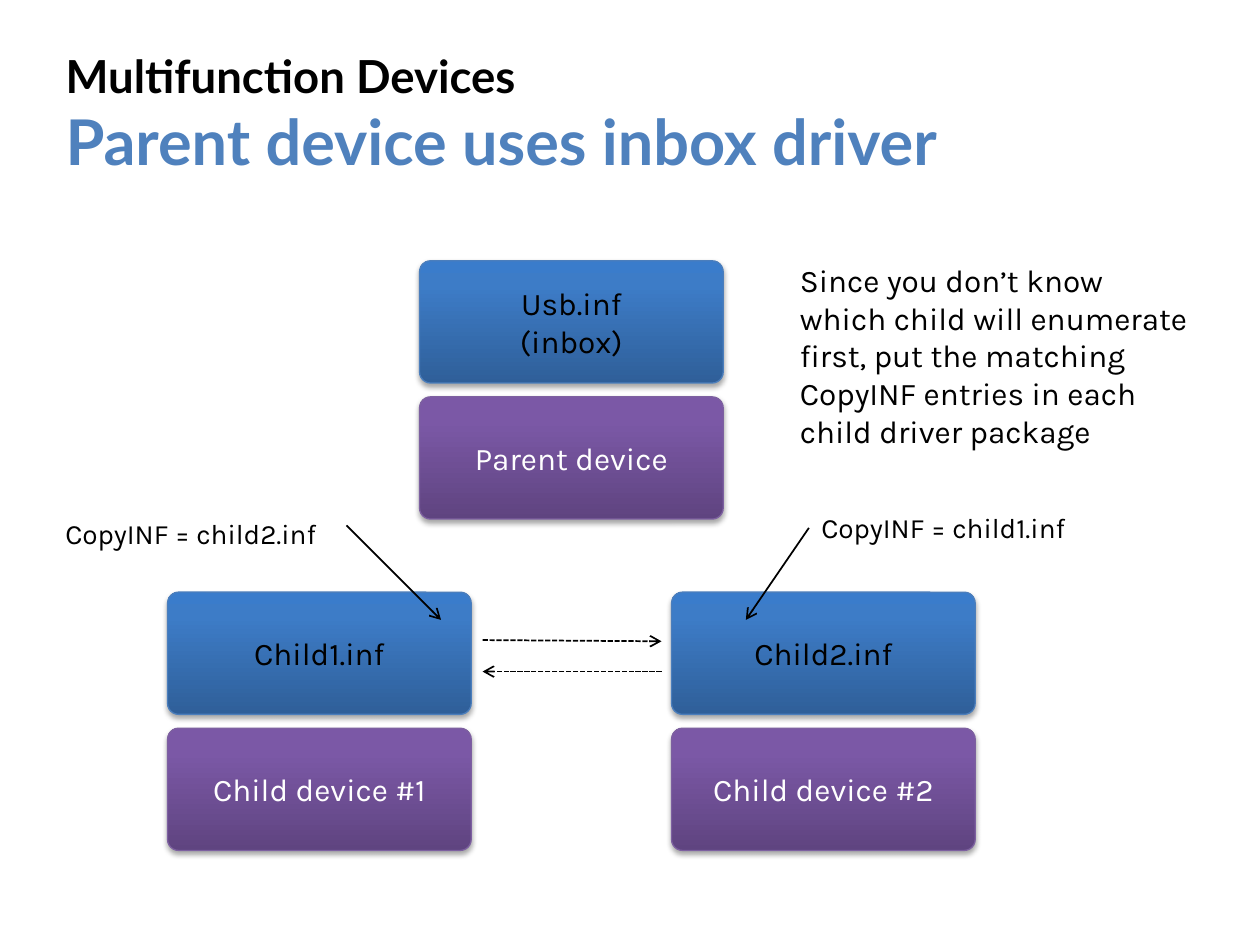
import copy

import pptx
import pptx.dml.color
import pptx.enum.dml
import pptx.enum.shapes
import pptx.enum.text
import pptx.oxml
import pptx.oxml.ns
import pptx.util

Inches = pptx.util.Inches
Pt = pptx.util.Pt
RGBColor = pptx.dml.color.RGBColor
qn = pptx.oxml.ns.qn

BLACK = RGBColor(0x00, 0x00, 0x00)
WHITE = RGBColor(0xFF, 0xFF, 0xFF)
TITLE_BLUE = RGBColor(0x4F, 0x81, 0xBD)
TITLE_FONT = "Lato"
BODY_FONT = "Karla"

DEVICE = {
    "stops": [(0, RGBColor(0x5F, 0x44, 0x80)), (0.8, RGBColor(0x7B, 0x58, 0xA6)),
              (1, RGBColor(0x7C, 0x57, 0xA8))],
    "line": RGBColor(0x7D, 0x60, 0xA0),
    "text": WHITE,
}
DRIVER = {
    "stops": [(0, RGBColor(0x2F, 0x5F, 0x99)), (0.8, RGBColor(0x3D, 0x7C, 0xC7)),
              (1, RGBColor(0x3A, 0x7C, 0xCB))],
    "line": RGBColor(0x4B, 0x7E, 0xBC),
    "text": BLACK,
}

TITLE_LINES = [("Multifunction Devices", 26, BLACK),
               ("Parent device uses inbox driver", 36, TITLE_BLUE)]
STACKS = [
    (3.33, 2.07, "Usb.inf\n(inbox)", "Parent device"),
    (1.33, 4.7, "Child1.inf", "Child device #1"),
    (5.33, 4.7, "Child2.inf", "Child device #2"),
]
BOX_WIDTH, BOX_HEIGHT, STACK_STEP = 2.41, 0.97, 1.08
LABEL_WIDTH = 3.33
LABELS = [
    (6.42, 4, 0.37, 16, "CopyINF = child1.inf"),
    (0.42, 4.05, 0.37, 16, "CopyINF = child2.inf"),
    (6.25, 2.02, 1.62, 18,
     "Since you don’t know \vwhich child will enumerate first, put the matching "
     "CopyINF entries in each child driver package"),
]
ARROWS = [
    (6.42, 4.19, 5.92, 4.92, False),
    (2.75, 4.17, 3.5, 4.92, False),
    (5.25, 5.33, 3.83, 5.33, True),
    (3.83, 5.08, 5.25, 5.09, True),
]
SHADOW_XML = (
    '<a:outerShdw %s blurRad="%d" dist="%d" dir="5400000" rotWithShape="0">'
    '<a:srgbClr val="000000"><a:alpha val="35000"/></a:srgbClr></a:outerShdw>'
    % (pptx.oxml.ns.nsdecls("a"), Pt(3.1), Pt(1.8))
)


def format_font(font, name, size, color, bold=False):
    font.name = name
    font.size = Pt(size)
    font.color.rgb = color
    font.bold = bold


def format_text(text_frame, size, color, alignment):
    for paragraph in text_frame.paragraphs:
        paragraph.alignment = alignment
        for run in paragraph.runs:
            format_font(run.font, BODY_FONT, size, color)


def fill_gradient(fill, stops):
    fill.gradient()
    fill.gradient_angle = 90
    first = fill.gradient_stops[0]
    first_element = fill._fill._gradFill.find(qn("a:gsLst"))[0]
    first_element.addnext(copy.deepcopy(first_element))
    for stop, (position, color) in zip(fill.gradient_stops, stops):
        stop.position = position
        stop.color.rgb = color


def add_title(slide):
    title = slide.shapes.title
    title.left, title.top = Inches(0.42), Inches(0.25)
    title.width, title.height = Inches(9.16), Inches(1.3)
    text_frame = title.text_frame
    text_frame.text = "\v".join(text for text, size, color in TITLE_LINES)
    text_frame.vertical_anchor = pptx.enum.text.MSO_ANCHOR.MIDDLE
    paragraph = text_frame.paragraphs[0]
    paragraph.alignment = pptx.enum.text.PP_ALIGN.LEFT
    for run, (text, size, color) in zip(paragraph.runs, TITLE_LINES):
        format_font(run.font, TITLE_FONT, size, color, bold=True)
    line_break = paragraph._p.find(qn("a:br"))
    line_break.insert(0, copy.deepcopy(paragraph.runs[0]._r.find(qn("a:rPr"))))


def add_box(slide, left, top, text, style):
    shape = slide.shapes.add_shape(
        pptx.enum.shapes.MSO_SHAPE.ROUNDED_RECTANGLE,
        Inches(left), Inches(top), Inches(BOX_WIDTH), Inches(BOX_HEIGHT))
    shape.adjustments[0] = 0.09
    fill_gradient(shape.fill, style["stops"])
    shape.line.color.rgb = style["line"]
    shape.line.width = Pt(0.75)
    shape.shadow.inherit = False
    effects = shape._element.spPr.find(qn("a:effectLst"))
    effects.append(pptx.oxml.parse_xml(SHADOW_XML))
    shape.text_frame.text = text
    shape.text_frame.word_wrap = True
    shape.text_frame.vertical_anchor = pptx.enum.text.MSO_ANCHOR.MIDDLE
    format_text(shape.text_frame, 18, style["text"], pptx.enum.text.PP_ALIGN.CENTER)


def add_label(slide, left, top, height, size, text):
    label = slide.shapes.add_textbox(
        Inches(left), Inches(top), Inches(LABEL_WIDTH), Inches(height))
    label.text_frame.text = text
    label.text_frame.word_wrap = True
    label.text_frame.auto_size = pptx.enum.text.MSO_AUTO_SIZE.SHAPE_TO_FIT_TEXT
    format_text(label.text_frame, size, BLACK, pptx.enum.text.PP_ALIGN.LEFT)


def add_arrow(slide, start_x, start_y, end_x, end_y, dashed):
    arrow = slide.shapes.add_connector(
        pptx.enum.shapes.MSO_CONNECTOR.STRAIGHT,
        Inches(start_x), Inches(start_y), Inches(end_x), Inches(end_y))
    arrow.line.color.rgb = BLACK
    arrow.line.width = Pt(1)
    if dashed:
        arrow.line.dash_style = pptx.enum.dml.MSO_LINE.SQUARE_DOT
    properties = arrow._element.spPr
    tail = pptx.oxml.parse_xml(
        '<a:tailEnd %s type="arrow"/>' % pptx.oxml.ns.nsdecls("a"))
    properties.find(qn("a:ln")).append(tail)
    properties.append(pptx.oxml.parse_xml(
        "<a:effectLst %s/>" % pptx.oxml.ns.nsdecls("a")))


def main():
    presentation = pptx.Presentation()
    presentation.slide_width = Inches(10)
    presentation.slide_height = Inches(7.5)
    slide = presentation.slides.add_slide(presentation.slide_layouts[5])
    add_title(slide)
    for left, top, driver, device in STACKS:
        add_box(slide, left, top + STACK_STEP, device, DEVICE)
        add_box(slide, left, top, driver, DRIVER)
    for label in LABELS:
        add_label(slide, *label)
    for arrow in ARROWS:
        add_arrow(slide, *arrow)
    presentation.save("out.pptx")


if __name__ == "__main__":
    main()
